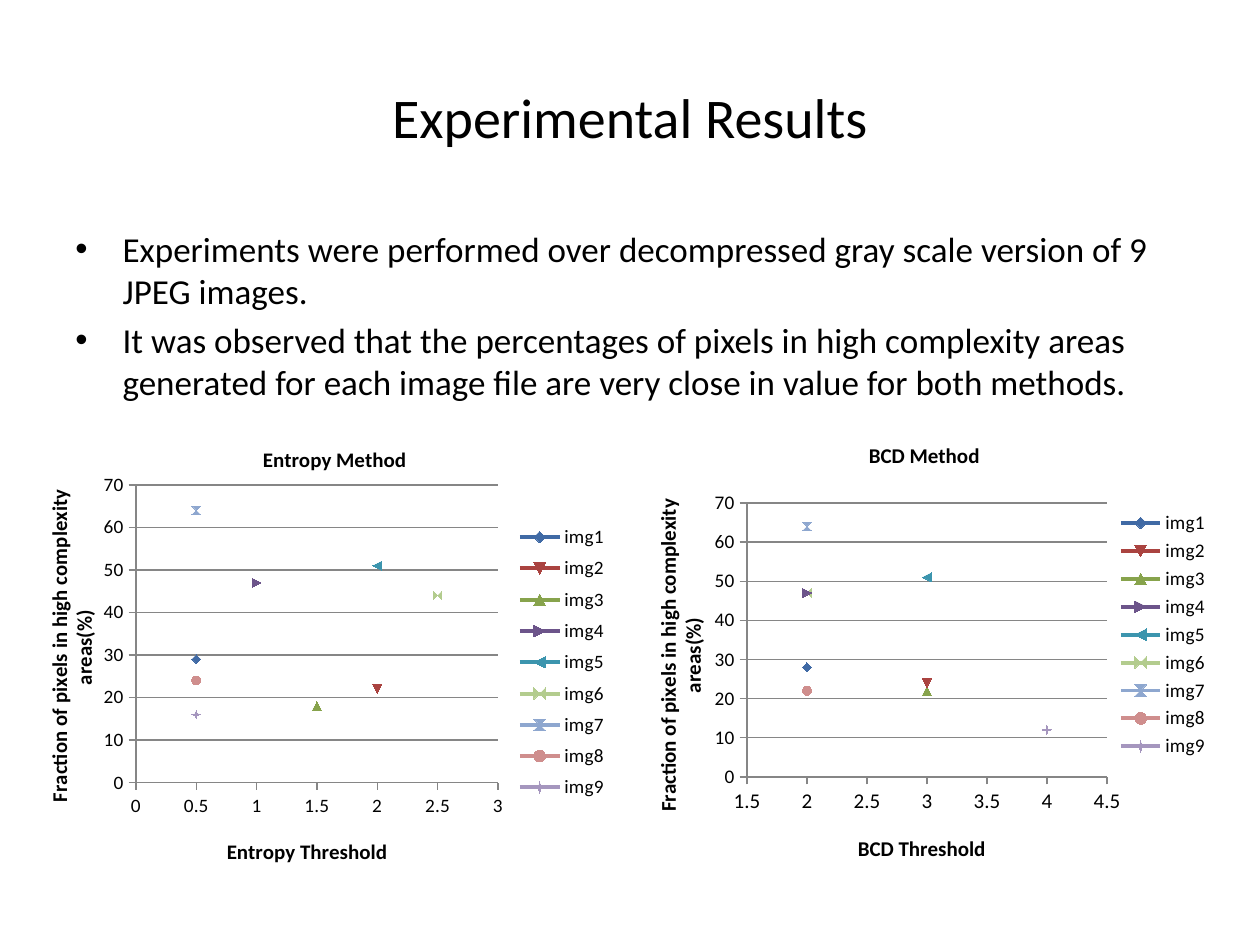
from lxml import etree
from pptx import Presentation
from pptx.chart.data import XyChartData
from pptx.dml.color import RGBColor
from pptx.enum.chart import XL_CHART_TYPE, XL_LEGEND_POSITION, XL_TICK_MARK
from pptx.enum.text import MSO_ANCHOR, PP_ALIGN
from pptx.oxml.ns import qn
from pptx.util import Pt

SCATTER = XL_CHART_TYPE.XY_SCATTER_LINES
RIGHT = XL_LEGEND_POSITION.RIGHT
OUT = XL_TICK_MARK.OUTSIDE
CENTER = PP_ALIGN.CENTER
MIDDLE = MSO_ANCHOR.MIDDLE
PX = 914400 / 126
FONT = "Calibri"
COLORS = {
    "text": "000000", "grid": "868686",
    "img1": "406AA5", "img2": "AA4340", "img3": "87A34C",
    "img4": "6C548A", "img5": "3C95AE", "img6": "B3CC8E",
    "img7": "8EA7CF", "img8": "CF8E8D", "img9": "A596BE",
}
RGB = {name: RGBColor.from_string(code) for name, code in COLORS.items()}
Y_NAME = "Fraction of pixels in high complexity areas(%)"


def style(font, size, bold=False):
    font.name, font.size, font.bold = FONT, Pt(size), bold
    font.color.rgb = RGB["text"]


def place(part, frame, box):
    """Fix a chart part at box (left, top[, width, height]) px inside frame."""
    for old in part.findall(qn("c:layout")):
        part.remove(old)
    layout = etree.Element(qn("c:layout"))
    inner = part.tag == qn("c:plotArea")
    part.insert(0 if inner else 1, layout)
    manual = etree.SubElement(layout, qn("c:manualLayout"))
    if inner:
        etree.SubElement(manual, qn("c:layoutTarget"), val="inner")
    for key in ("xMode", "yMode"):
        etree.SubElement(manual, qn("c:" + key), val="edge")
    for key, size, total in zip("xywh", box, frame[2:] * 2):
        etree.SubElement(manual, qn("c:" + key), val=f"{size / total:.4f}")


deck = Presentation()
deck.slide_width, deck.slide_height = round(1260 * PX), round(945 * PX)
slide = deck.slides.add_slide(deck.slide_layouts[6])

title = slide.shapes.add_textbox(*[round(v * PX) for v in (63, 38, 1134, 157)])
title.text_frame.word_wrap = True
title.text_frame.vertical_anchor = MIDDLE
para = title.text_frame.paragraphs[0]
para.text = "Experimental Results"
para.alignment = CENTER
style(para.font, 32)

body = slide.shapes.add_textbox(*[round(v * PX) for v in (63, 221, 1134, 624)])
body.text_frame.word_wrap = True
body.text_frame.text = (
    "Experiments were performed over decompressed gray scale version of 9 JPEG images.\n"
    "It was observed that the percentages of pixels in high complexity areas "
    "generated for each image file are very close in value for both methods."
)
for num, para in enumerate(body.text_frame.paragraphs):
    props = para._p.get_or_add_pPr()
    props.set("marL", "342900")
    props.set("indent", "-342900")
    etree.SubElement(props, qn("a:buFont"), typeface="Arial")
    etree.SubElement(props, qn("a:buChar"), char="•")
    para.space_before = Pt(4 * num)
    style(para.font, 20)

# Part boxes are in px from the chart's top left corner.
CHARTS = [
    {"name": "Entropy", "frame": (32, 420, 598, 451), "range": (0, 3), "size": 11,
     "plot": (104, 66, 362, 302), "legend": (476, 99, 108, 294),
     "title": (227, 22), "x": (191, 420), "y": (9, 71),
     "points": [(0.5, 29), (2, 22), (1.5, 18), (1, 47), (2, 51),
                (2.5, 44), (0.5, 64), (0.5, 24), (0.5, 16)]},
    {"name": "BCD", "frame": (630, 399, 588, 473), "range": (1.5, 4.5), "size": 12,
     "plot": (117, 104, 360, 274), "legend": (483, 108, 100, 256),
     "title": (235, 38), "x": (224, 432), "y": (20, 96),
     "points": [(2, 28), (3, 24), (3, 22), (2, 47), (3, 51),
                (2, 47), (2, 64), (2, 22), (4, 12)]},
]

for spec in CHARTS:
    frame = spec["frame"]
    data = XyChartData()
    for num, point in enumerate(spec["points"], 1):
        data.add_series(f"img{num}").add_data_point(*point)
    chart = slide.shapes.add_chart(SCATTER, *[round(v * PX) for v in frame], data).chart
    style(chart.font, 10)

    for row in chart.plots[0].series:
        row.smooth = False
        row.format.line.color.rgb = RGB[row.name]
        row.format.line.width = Pt(2.25)

    chart.has_legend = True
    chart.legend.position = RIGHT
    chart.legend.include_in_layout = False
    style(chart.legend.font, 11)

    across, up = chart.category_axis, chart.value_axis
    across.has_major_gridlines = False
    up.has_major_gridlines = True
    up.major_gridlines.format.line.color.rgb = RGB["grid"]
    for axis, ends, step, size in ((across, spec["range"], 0.5, spec["size"]),
                                   (up, (0, 70), 10, 11)):
        axis.minimum_scale, axis.maximum_scale = ends
        axis.major_unit = step
        axis.major_tick_mark = OUT
        axis.format.line.color.rgb = RGB["grid"]
        style(axis.tick_labels.font, size)

    chart.has_title = True
    for head, words, key in (
        (chart.chart_title, spec["name"] + " Method", "title"),
        (across.axis_title, spec["name"] + " Threshold", "x"),
        (up.axis_title, Y_NAME, "y"),
    ):
        head.text_frame.text = words
        style(head.text_frame.paragraphs[0].font, 12, True)
        part = head._element
        place(part, frame, spec[key])
        if key == "y":
            turn = part.find(".//" + qn("a:bodyPr"))
            turn.set("rot", "-5400000")
            turn.set("vert", "horz")

    root = chart._chartSpace
    place(root.find(".//" + qn("c:plotArea")), frame, spec["plot"])
    place(root.find(".//" + qn("c:legend")), frame, spec["legend"])

deck.save("out.pptx")
